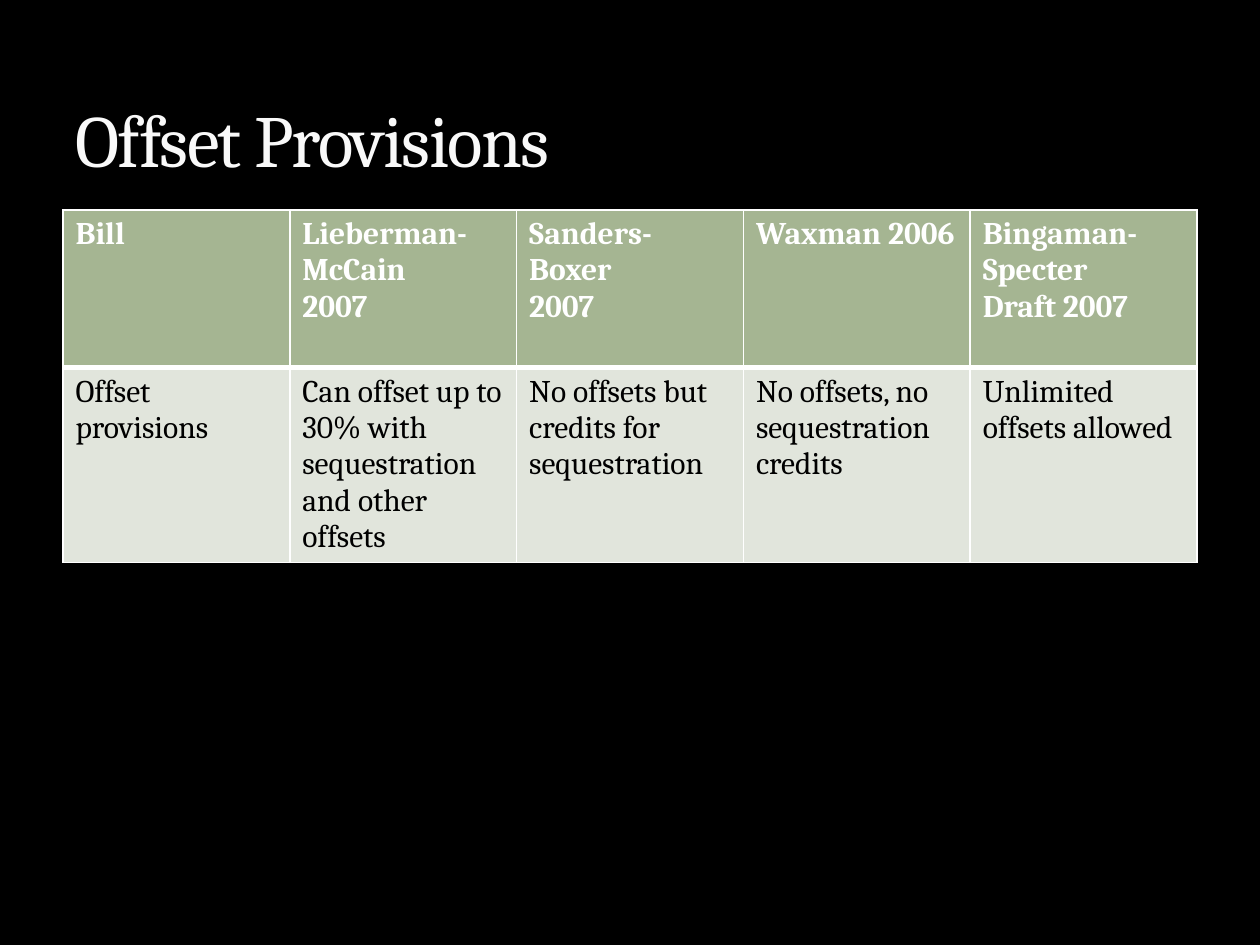
from dataclasses import dataclass

from lxml import etree
from pptx import Presentation
from pptx.dml.color import RGBColor
from pptx.enum import text
from pptx.oxml import ns
from pptx.util import Cm, Pt


@dataclass(frozen=True)
class Theme:
    font: str = "Cambria"
    background: str = "000000"
    title: str = "F9F9F9"
    title_outline: str = "3C4422"
    header_fill: str = "A5B592"
    header_text: str = "FFFFFF"
    body_fill: str = "E1E5DC"
    body_text: str = "000000"
    border: str = "FFFFFF"
    title_size: int = 42
    table_size: int = 18
    thin: int = 1
    thick: int = 3


THEME = Theme()
LEFT, WIDTH = Cm(1.27), Cm(22.86)
ROW_HEIGHTS = (Cm(3.18), Cm(3.93))
# One tuple per cell, one entry per paragraph
HEADER = [
    ("Bill",),
    ("Lieberman-McCain", "2007"),
    ("Sanders-Boxer", "2007"),
    ("Waxman 2006",),
    ("Bingaman-Specter", "Draft 2007"),
]
PROVISIONS = [
    ("Offset provisions",),
    ("Can offset up to 30% with sequestration and other offsets",),
    ("No offsets but credits for sequestration",),
    ("No offsets, no sequestration credits",),
    ("Unlimited offsets allowed",),
]


def add_run(paragraph, wording, size, color, bold=False):
    run = paragraph.add_run()
    run.text = wording
    run.font.name = THEME.font
    run.font.size = Pt(size)
    run.font.bold = bold
    run.font.color.rgb = RGBColor.from_string(color)
    return run


def line_element(tag, width, color, alpha=100):
    line = etree.Element(ns.qn(tag), w=str(Pt(width)))
    fill = etree.SubElement(line, ns.qn("a:solidFill"))
    shade = etree.SubElement(fill, ns.qn("a:srgbClr"), val=color)
    if alpha < 100:
        etree.SubElement(shade, ns.qn("a:alpha"), val=str(alpha * 1000))
    return line


def set_borders(cell, top, bottom):
    """Draw thin sides, with the given widths above and below."""
    widths = {"a:lnL": THEME.thin, "a:lnR": THEME.thin, "a:lnT": top, "a:lnB": bottom}
    properties = cell._tc.get_or_add_tcPr()
    for position, (tag, width) in enumerate(widths.items()):
        properties.insert(position, line_element(tag, width, THEME.border))


def add_title(slide, wording):
    title = slide.shapes.title
    title.left, title.top, title.width, title.height = LEFT, Cm(0.43), WIDTH, Cm(3.38)
    frame = title.text_frame
    frame.word_wrap = True
    frame.auto_size = text.MSO_AUTO_SIZE.NONE
    frame.vertical_anchor = text.MSO_ANCHOR.BOTTOM
    paragraph = frame.paragraphs[0]
    paragraph.alignment = text.PP_ALIGN.LEFT
    run = add_run(paragraph, wording, THEME.title_size, THEME.title)
    properties = run._r.get_or_add_rPr()
    properties.set("spc", "-100")
    properties.insert(0, line_element("a:ln", 0.25, THEME.title_outline, alpha=25))


def fill_cell(cell, lines, fill, color, bold):
    cell.fill.solid()
    cell.fill.fore_color.rgb = RGBColor.from_string(fill)
    frame = cell.text_frame
    for index, wording in enumerate(lines):
        paragraph = frame.add_paragraph() if index else frame.paragraphs[0]
        add_run(paragraph, wording, THEME.table_size, color, bold)


def add_bill_table(slide):
    frame = slide.shapes.add_table(
        2, len(HEADER), LEFT, Cm(4.23), WIDTH, sum(ROW_HEIGHTS)
    )
    table = frame.table
    for row, height in zip(table.rows, ROW_HEIGHTS):
        row.height = height
    for column, (bill, provision) in enumerate(zip(HEADER, PROVISIONS)):
        header, body = table.cell(0, column), table.cell(1, column)
        fill_cell(header, bill, THEME.header_fill, THEME.header_text, True)
        fill_cell(body, provision, THEME.body_fill, THEME.body_text, False)
        set_borders(header, THEME.thin, THEME.thick)
        set_borders(body, THEME.thick, THEME.thin)


def main():
    presentation = Presentation()
    presentation.slide_width, presentation.slide_height = Cm(25.4), Cm(19.05)
    slide = presentation.slides.add_slide(presentation.slide_layouts[5])
    background = slide.background.fill
    background.solid()
    background.fore_color.rgb = RGBColor.from_string(THEME.background)
    add_bill_table(slide)
    add_title(slide, "Offset Provisions")
    presentation.save("out.pptx")


if __name__ == "__main__":
    main()
